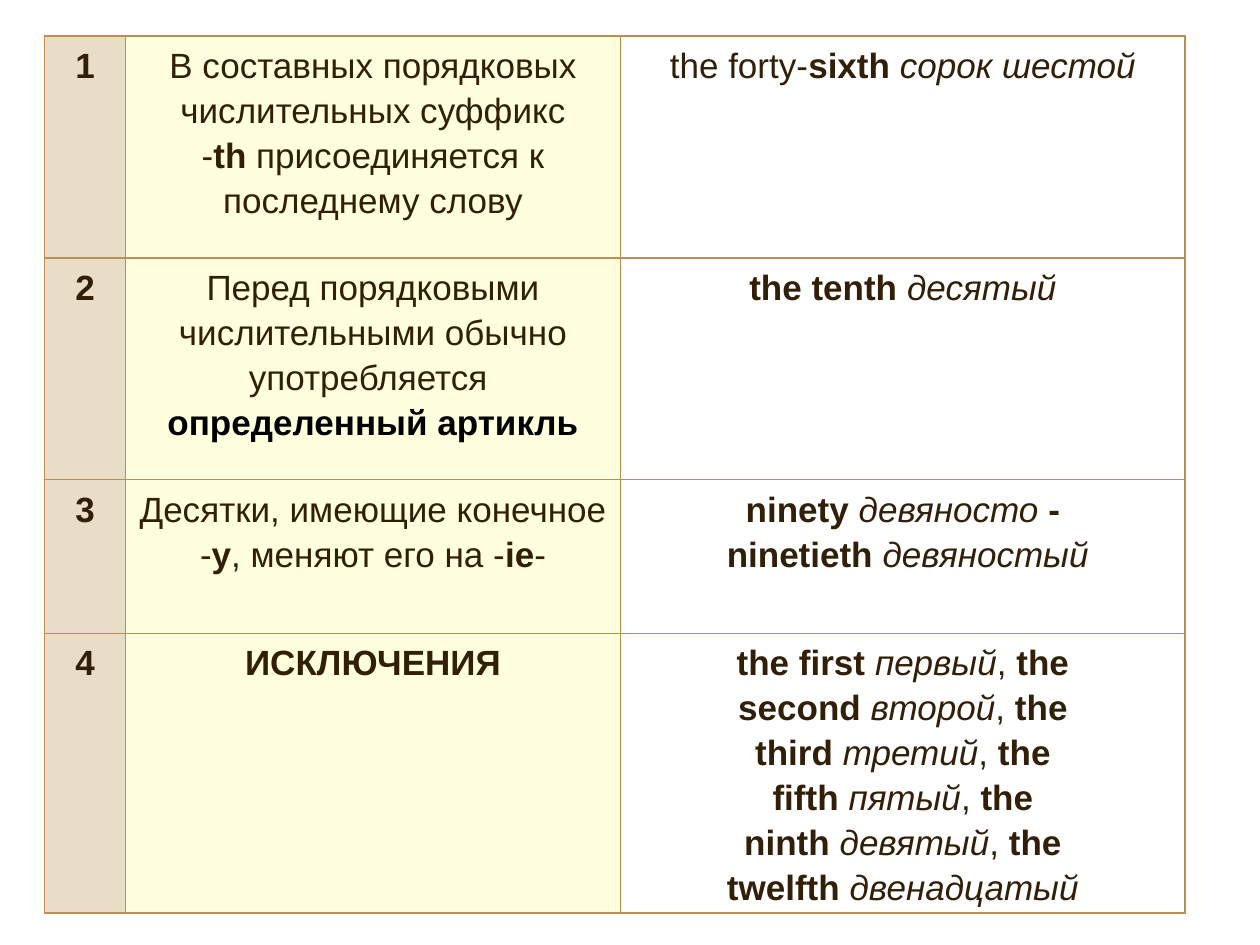
from lxml.etree import SubElement as Sub
from pptx import Presentation as Deck
from pptx.dml.color import RGBColor as Rgb
from pptx.enum.text import PP_ALIGN as Align
from pptx.oxml.ns import qn
from pptx.util import Cm, Pt

HUES = {"text": "321F08", "black": "000000", "line": "BD8E51",
        "num": "E9DDC8", "rule": "FFFFDD", "case": "FFFFFF"}
FILLS = ("num", "rule", "case")
COLS = (1.63, 9.98, 11.38)
ROWS = (4.47, 4.47, 3.1, 5.54)
NBSP = chr(160)

ORDERS = (("first", "первый"), ("second", "второй"), ("third", "третий"),
          ("fifth", "пятый"), ("ninth", "девятый"), ("twelfth", "двенадцатый"))


def list_orders():
    """Return the runs that list the exceptions; ~ is a no-break space."""
    runs = []
    for word, sense in ORDERS:
        if runs:
            runs.append((",~", ""))
        runs += [(f"the {word}~", "b"), (sense, "i")]
    return runs


RULES = (
    ([[("В составных порядковых числительных суффикс -", ""), ("th", "b"),
       ("~присоединяется к последнему слову", "")]],
     [[("the forty-", ""), ("sixth~", "b"), ("сорок шестой", "i")]]),
    ([[("Перед порядковыми числительными обычно употребляется~", "")],
      [("определенный артикль", "bk")]],
     [[("the tenth~", "b"), ("десятый", "i")]]),
    ([[("Десятки, имеющие конечное -", ""), ("y", "b"),
       (", меняют его на -", ""), ("ie", "b"), ("-", "")]],
     [[("ninety~", "b"), ("девяносто~", "i"), ("-~ninetieth~", "b"),
       ("девяностый", "i")]]),
    ([[("ИСКЛЮЧЕНИЯ", "b")]], [list_orders()]),
)


def add_run(para, text, style):
    """Add one run: b is bold, i is italic, k is black."""
    run = para.add_run()
    run.text = text.replace("~", NBSP)
    font = run.font
    font.name, font.size = "Arial", Pt(20)
    font.bold, font.italic = "b" in style, "i" in style
    font.color.rgb = Rgb.from_string(HUES["black" if "k" in style else "text"])


def add_edges(cell):
    """Draw the four borders of a cell."""
    props = cell._tc.get_or_add_tcPr()
    for side in ("a:lnL", "a:lnR", "a:lnT", "a:lnB"):
        line = Sub(props, qn(side), w=str(Pt(1)))
        fill = Sub(line, qn("a:solidFill"))
        Sub(fill, qn("a:srgbClr"), val=HUES["line"])


def fill_cell(cell, paras, hue):
    """Set the look and the text of a cell."""
    cell.margin_left = cell.margin_right = Cm(0.1)
    cell.margin_top = cell.margin_bottom = Cm(0.1)
    add_edges(cell)
    cell.fill.solid()
    cell.fill.fore_color.rgb = Rgb.from_string(HUES[hue])
    frame = cell.text_frame
    for at, runs in enumerate(paras):
        para = frame.add_paragraph() if at else frame.paragraphs[0]
        para.alignment, para.line_spacing = Align.CENTER, 1.15
        for text, style in runs:
            add_run(para, text, style)


def add_grid(slide):
    """Add the table of rules and examples."""
    grid = slide.shapes.add_table(len(ROWS), len(COLS), Cm(0.9), Cm(0.73),
                                  Cm(sum(COLS)), Cm(sum(ROWS))).table
    grid.first_row = grid.horz_banding = False
    for col, width in zip(grid.columns, COLS):
        col.width = Cm(width)
    for at, (row, high, rule) in enumerate(zip(grid.rows, ROWS, RULES), 1):
        row.height = Cm(high)
        number = [[(str(at), "b")]]
        for cell, paras, hue in zip(row.cells, (number, *rule), FILLS):
            fill_cell(cell, paras, hue)


def main():
    """Build and save the slide."""
    deck = Deck()
    deck.slide_width, deck.slide_height = Cm(25.4), Cm(19.05)
    add_grid(deck.slides.add_slide(deck.slide_layouts[6]))
    deck.save("out.pptx")


if __name__ == "__main__":
    main()
